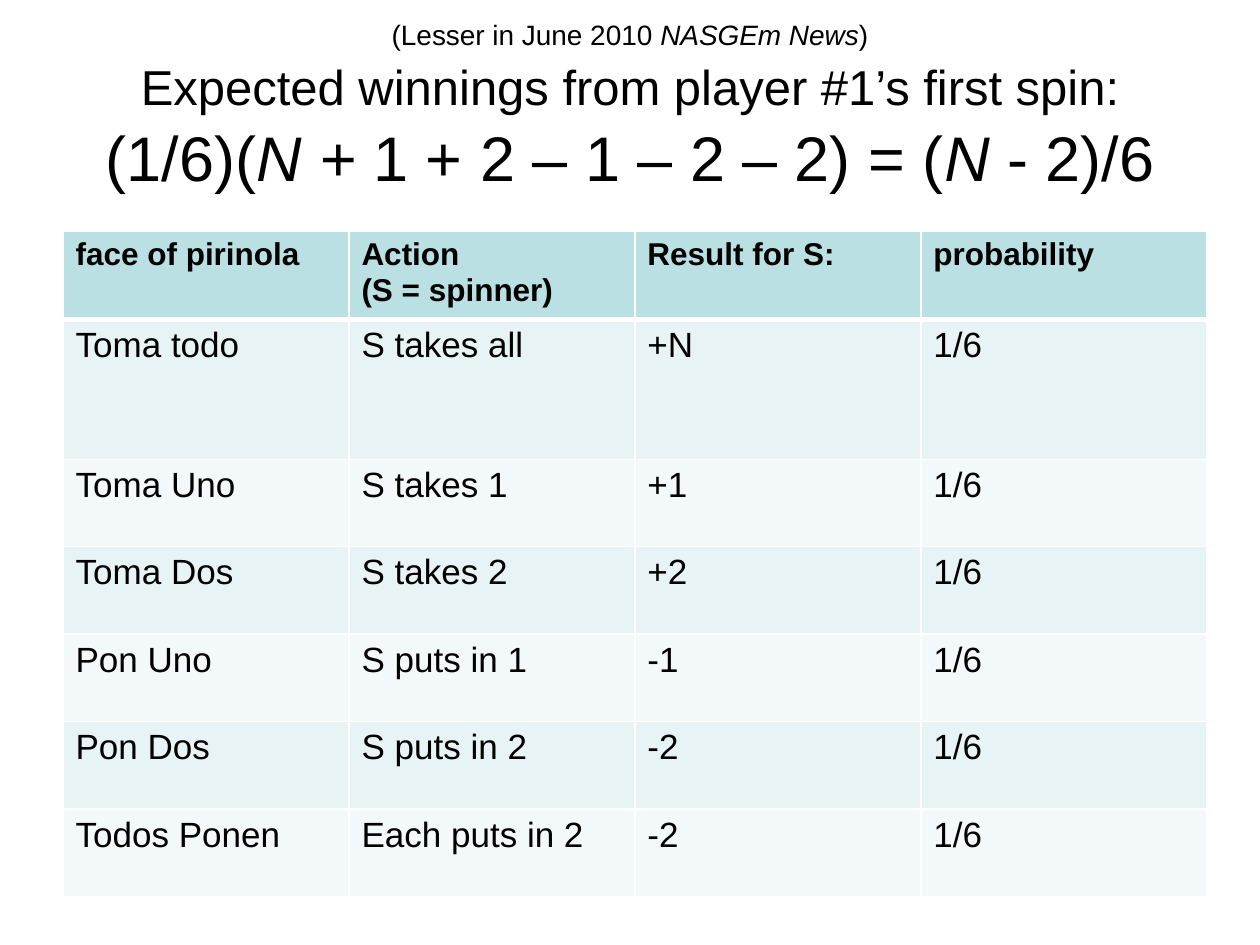
import pptx
import pptx.dml.color
import pptx.enum.text
import pptx.oxml.ns
import pptx.util
import lxml.etree

Pt = pptx.util.Pt
COLORS = {
    "text": "000000",
    "border": "FFFFFF",
    "header": "BBE0E3",
    "odd": "E7F3F4",
    "even": "F3F9FA",
}

HEADERS = ["face of pirinola", "Action\n(S = spinner)", "Result for S:", "probability"]
OUTCOMES = [
    ["Toma todo", "S takes all", "+N"],
    ["Toma Uno", "S takes 1", "+1"],
    ["Toma Dos", "S takes 2", "+2"],
    ["Pon Uno", "S puts in 1", "-1"],
    ["Pon Dos", "S puts in 2", "-2"],
    ["Todos Ponen", "Each puts in 2", "-2"],
]
TITLE = [
    (16, 0, [("(Lesser in June 2010 ", False), ("NASGEm News", True), (")", False)]),
    (28, 3, [("Expected winnings from player #1’s first spin:", False)]),
    (36, 2, [("(1/6)(", False), ("N + ", True), ("1 + 2 – 1 – 2 – 2) = (", False),
             ("N", True), (" - 2)/6", False)]),
]


def rgb(name):
    return pptx.dml.color.RGBColor.from_string(COLORS[name])


def add_span(para, text, *, font, size, color="text", bold=False, italic=False):
    span = para.add_run()
    span.text = text
    span.font.name = font
    span.font.size = Pt(size)
    span.font.bold = bold
    span.font.italic = italic
    span.font.color.rgb = rgb(color)


class SlideBuilder:
    def __init__(self, page, font="Arial"):
        self.page = page
        self.font = font

    def title(self, lines, left, top, width, height):
        box = self.page.shapes.add_textbox(Pt(left), Pt(top), Pt(width), Pt(height))
        frame = box.text_frame
        frame.word_wrap = True
        frame.margin_top = frame.margin_bottom = 0
        for index, (size, gap, spans) in enumerate(lines):
            para = frame.add_paragraph() if index else frame.paragraphs[0]
            para.alignment = pptx.enum.text.PP_ALIGN.CENTER
            para.space_before = Pt(gap)
            for text, italic in spans:
                add_span(para, text, font=self.font, size=size, italic=italic)

    def borders(self, cell, top, bottom):
        properties = cell._tc.get_or_add_tcPr()
        for side, weight in (("L", 1), ("R", 1), ("T", top), ("B", bottom)):
            line = lxml.etree.SubElement(
                properties, pptx.oxml.ns.qn(f"a:ln{side}"), w=str(Pt(weight)))
            fill = lxml.etree.SubElement(line, pptx.oxml.ns.qn("a:solidFill"))
            lxml.etree.SubElement(
                fill, pptx.oxml.ns.qn("a:srgbClr"), val=COLORS["border"])

    def cell(self, cell, text, fill, size, bold, top, bottom):
        self.borders(cell, top, bottom)
        cell.fill.solid()
        cell.fill.fore_color.rgb = rgb(fill)
        frame = cell.text_frame
        for index, line in enumerate(text.split("\n")):
            para = frame.add_paragraph() if index else frame.paragraphs[0]
            add_span(para, line, font=self.font, size=size, bold=bold)

    def table(self, rows, left, top, column_width, row_heights):
        columns = len(rows[0])
        table = self.page.shapes.add_table(
            len(rows), columns, Pt(left), Pt(top),
            Pt(column_width * columns), Pt(sum(row_heights))).table
        for column in table.columns:
            column.width = Pt(column_width)
        for index, (texts, height) in enumerate(zip(rows, row_heights)):
            table.rows[index].height = Pt(height)
            header = index == 0
            fill = "header" if header else "odd" if index % 2 else "even"
            for column, text in enumerate(texts):
                self.cell(table.cell(index, column), text, fill,
                          size=18 if header else 20, bold=header,
                          top=3 if index == 1 else 1, bottom=3 if header else 1)


def main():
    deck = pptx.Presentation()
    deck.slide_width, deck.slide_height = Pt(720), Pt(540)
    builder = SlideBuilder(deck.slides.add_slide(deck.slide_layouts[6]))
    builder.title(TITLE, 36, 10, 648, 98)
    rows = [HEADERS] + [outcome + ["1/6"] for outcome in OUTCOMES]
    builder.table(rows, 36, 132, 163.4, [50, 80] + [50] * 5)
    deck.save("out.pptx")


if __name__ == "__main__":
    main()
